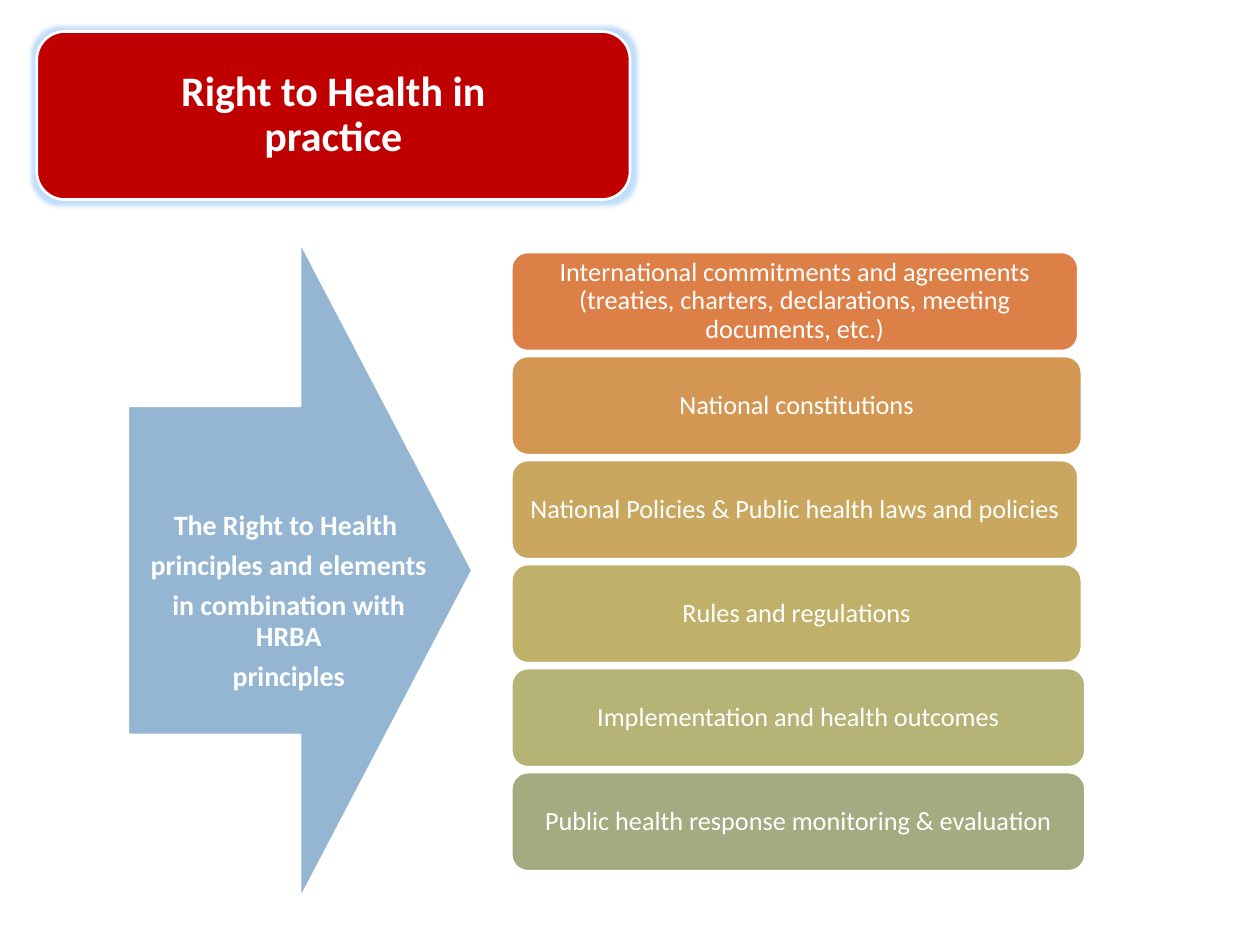
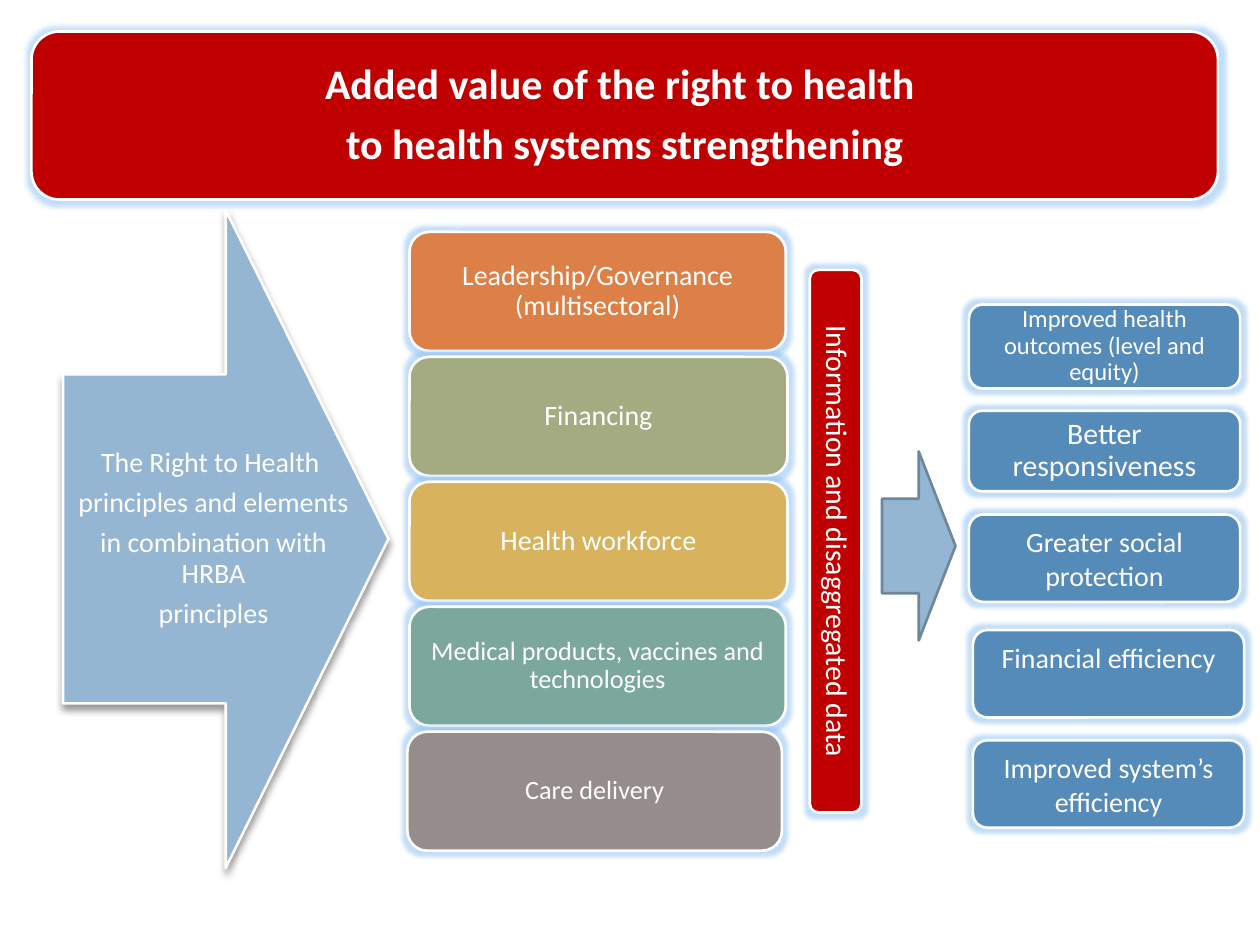
from lxml.etree import SubElement
from pptx import Presentation
from pptx.dml.color import RGBColor
from pptx.enum.shapes import MSO_SHAPE as Preset
from pptx.enum.text import MSO_ANCHOR as Anchor, PP_ALIGN as Align
from pptx.oxml.ns import qn
from pptx.util import Pt

FONT = "Calibri"
WHITE = RGBColor(0xFF, 0xFF, 0xFF)
RED = RGBColor(0xC0, 0x00, 0x00)
SKY = RGBColor(0x94, 0xB6, 0xD2)
SKY_EDGE = RGBColor(0x6D, 0x87, 0x9B)
BLUE = RGBColor(0x55, 0x8B, 0xB8)
ORANGE = RGBColor(0xDD, 0x80, 0x47)
COPPER = RGBColor(0xD3, 0x97, 0x53)
OCHRE = RGBColor(0xC9, 0xA7, 0x5F)
KHAKI = RGBColor(0xBF, 0xB1, 0x6A)
OLIVE = RGBColor(0xB5, 0xB4, 0x76)
SAGE = RGBColor(0xA5, 0xAB, 0x81)
GOLD = RGBColor(0xD8, 0xB2, 0x5C)
TEAL = RGBColor(0x7B, 0xA7, 0x9D)
TAUPE = RGBColor(0x96, 0x8C, 0x8C)
GLOW = ("a:glow", {"rad": str(Pt(5))}, "78B5F0", "45000")
DROP = ("a:outerShdw", {"blurRad": str(Pt(4)), "dist": str(Pt(3)), "dir": "5400000",
                        "rotWithShape": "0"}, "000000", "40000")
PRINCIPLES = ["The Right to Health ", "principles and elements",
              "in combination with HRBA", "principles"]


def draw(slide, preset, left, top, width, height, fill, effect=None, edge=WHITE):
    shape = slide.shapes.add_shape(preset, Pt(left), Pt(top), Pt(width), Pt(height))
    shape.fill.solid()
    shape.fill.fore_color.rgb = fill
    shape.line.color.rgb = edge
    shape.line.width = Pt(1.5)
    shape.shadow.inherit = False
    if effect:
        tag, settings, color, alpha = effect
        effects = shape._element.spPr.find(qn("a:effectLst"))
        tint = SubElement(SubElement(effects, qn(tag), settings), qn("a:srgbClr"), val=color)
        SubElement(tint, qn("a:alpha"), val=alpha)
    return shape


def write(shape, lines, size, bold=False, side=5, edge=3, anchor=Anchor.MIDDLE, tight=True):
    frame = shape.text_frame
    frame.text = "\n".join(lines)
    frame.word_wrap = True
    frame.vertical_anchor = anchor
    frame.margin_left = frame.margin_right = Pt(side)
    frame.margin_top = frame.margin_bottom = Pt(edge)
    for paragraph in frame.paragraphs:
        paragraph.alignment = Align.CENTER
        if tight:
            paragraph.line_spacing = 0.9
            paragraph.space_after = Pt(0.35 * size)
        font = paragraph.runs[0].font
        font.name = FONT
        font.size = Pt(size)
        font.bold = bold
        font.color.rgb = WHITE


deck = Presentation()
deck.slide_width, deck.slide_height = Pt(720), Pt(540)
blank = deck.slide_layouts[6]
practice = deck.slides.add_slide(blank)
added_value = deck.slides.add_slide(blank)

for slide, left, width, side, title in [
    (practice, 21, 339, 37, ["Right to Health in practice"]),
    (added_value, 18, 678, 9, ["Added value of the right to health ",
                               "to health systems strengthening"]),
]:
    band = draw(slide, Preset.ROUNDED_RECTANGLE, left, 18, width, 96, RED, GLOW)
    write(band, title, 24, bold=True, side=side)

for slide, left, top, width, text_left, text_top, bold, effect in [
    (practice, 73, 138, 197, 84, 174, True, None),
    (added_value, 36, 120, 186, 41, 138, False, DROP),
]:
    draw(slide, Preset.RIGHT_ARROW, left, top, width, 376, SKY, effect)
    principles = slide.shapes.add_textbox(Pt(text_left), Pt(text_top), Pt(162), Pt(340))
    write(principles, PRINCIPLES, 16, bold=bold, side=0, edge=13)

for level, (width, color, text) in enumerate([
    (324, ORANGE, "International commitments and agreements "
                  "(treaties, charters, declarations, meeting documents, etc.)"),
    (326, COPPER, "National constitutions"),
    (324, OCHRE, "National Policies & Public health laws and policies"),
    (326, KHAKI, "Rules and regulations"),
    (328, OLIVE, "Implementation and health outcomes"),
    (328, SAGE, "Public health response monitoring & evaluation"),
]):
    commitment = draw(practice, Preset.ROUNDED_RECTANGLE, 292.2, 144 + 59.45 * level,
                      width, 56.6, color)
    write(commitment, [text], 15, edge=2)

for row, (left, width, color, size, text) in enumerate([
    (234, 215, ORANGE, 16, "Leadership/Governance (multisectoral)"),
    (234, 216, SAGE, 16, "Financing"),
    (234, 216, GOLD, 16, "Health workforce"),
    (234, 215, TEAL, 15, "Medical products, vaccines and technologies"),
    (232.8, 214, TAUPE, 15, "Care delivery"),
]):
    building_block = draw(added_value, Preset.ROUNDED_RECTANGLE, left, 132.5 + 71.4 * row,
                          width, 68, color, GLOW)
    write(building_block, [text], size, edge=2)

information = draw(added_value, Preset.ROUNDED_RECTANGLE, 322.5, 294.5, 310, 29.5, RED, GLOW)
information.rotation = 90
write(information, ["Information and disaggregated data"], 17)

draw(added_value, Preset.RIGHT_ARROW, 504, 258, 42, 108, SKY, edge=SKY_EDGE)

for left, top, height, size, tight, text in [
    (553.7, 174, 48, 14, True, "Improved health outcomes (level and equity)"),
    (553.7, 234.7, 46, 17, True, "Better responsiveness"),
    (553.7, 294, 50, 16, False, "Greater social protection"),
    (556, 360, 50, 16, False, "Financial efficiency"),
    (556, 423, 50, 16, False, "Improved system’s efficiency"),
]:
    outcome = draw(added_value, Preset.ROUNDED_RECTANGLE, left, top, 155, height, BLUE, GLOW)
    if tight:
        write(outcome, [text], size)
    else:
        write(outcome, [text], size, side=7.2, edge=3.6, anchor=Anchor.TOP, tight=False)

deck.save("out.pptx")
